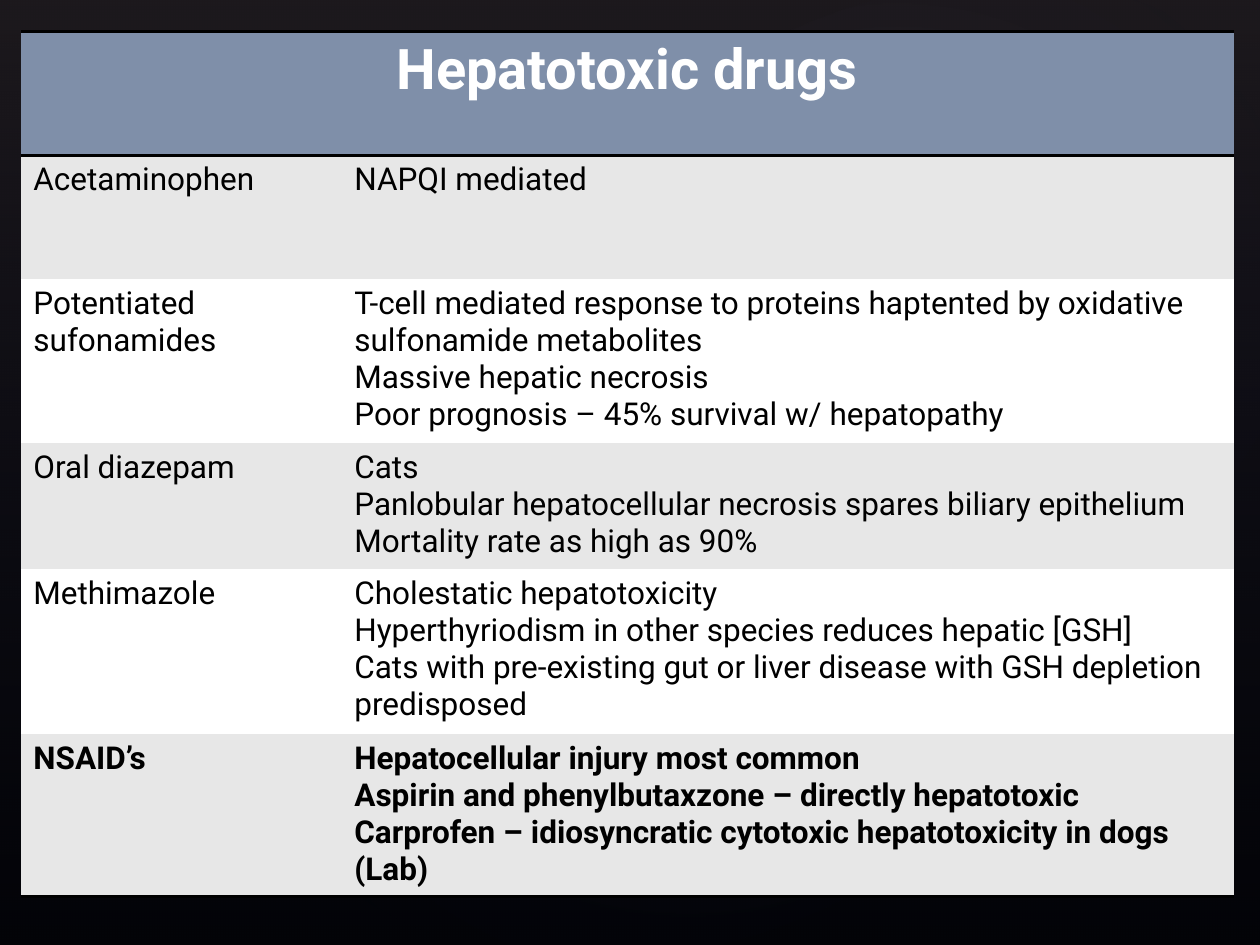
from lxml import etree
from pptx import Presentation
from pptx.dml.color import RGBColor
from pptx.enum.shapes import MSO_SHAPE
from pptx.enum.text import PP_ALIGN
from pptx.oxml.ns import qn
from pptx.util import Cm, Pt

LEFT, CENTER = PP_ALIGN.LEFT, PP_ALIGN.CENTER
RECT, OVAL = MSO_SHAPE.RECTANGLE, MSO_SHAPE.OVAL
FONT = "Roboto"
COLORS = {
    "back": "000000",
    "dusk": "504652",
    "navy": "242852",
    "glow": "C4BCC6",
    "head": "7F8FA9",
    "band": "E7E7E7",
    "plain": "FFFFFF",
    "text": "000000",
    "line": "000000",
}
WIDE, HIGH = 25.4, 19.05
# Box in cm, turn in degrees, opacity in percent
GLOWS = [
    ((3.81, 2.9, 20.12, 15.85), 328.7, 7),
    ((-0.76, 3.25, 15.39, 12.45), 294.3, 8),
    ((9.09, 0.33, 18.01, 13.21), 328.7, 8),
]
TITLE = "Hepatotoxic drugs"
# Drug, facts, row height in cm
DRUGS = [
    ("Acetaminophen", ["NAPQI mediated"], 2.5),
    ("Potentiated sufonamides", [
        "T-cell mediated response to proteins haptented by oxidative "
        "sulfonamide metabolites",
        "Massive hepatic necrosis",
        "Poor prognosis – 45% survival w/ hepatopathy"], 3.31),
    ("Oral diazepam", [
        "Cats",
        "Panlobular hepatocellular necrosis spares biliary epithelium",
        "Mortality rate as high as 90%"], 2.54),
    ("Methimazole", [
        "Cholestatic hepatotoxicity",
        "Hyperthyriodism in other species reduces hepatic [GSH]",
        "Cats with pre-existing gut or liver disease with GSH depletion "
        "predisposed"], 3.31),
    ("NSAID’s", [
        "Hepatocellular injury most common",
        "Aspirin and phenylbutaxzone – directly hepatotoxic",
        "Carprofen – idiosyncratic cytotoxic hepatotoxicity in dogs (Lab)"],
        3.29),
]
HEAD_H = 2.5
COLS = [6.47, 17.98]


def rgb(name):
    return RGBColor.from_string(COLORS[name])


def write(frame, lines, size=18, color="text", bold=False, align=LEFT):
    for i, line in enumerate(lines):
        para = frame.add_paragraph() if i else frame.paragraphs[0]
        para.alignment = align
        run = para.add_run()
        run.text = line
        font = run.font
        font.name, font.size, font.bold = FONT, Pt(size), bold
        font.color.rgb = rgb(color)


def edge(cell, ruled):
    """Rule the named sides (of L, R, T, B) and clear the others."""
    props = cell._tc.get_or_add_tcPr()
    for i, side in enumerate("LRTB"):
        line = etree.Element(qn("a:ln" + side), w=str(Pt(2)))
        if side in ruled:
            fill = etree.SubElement(line, qn("a:solidFill"))
            etree.SubElement(fill, qn("a:srgbClr"), val=COLORS["line"])
        else:
            etree.SubElement(line, qn("a:noFill"))
        props.insert(i, line)


def paint(cell, color, ruled=""):
    cell.fill.solid()
    cell.fill.fore_color.rgb = rgb(color)
    edge(cell, ruled)


def add_haze(slide, kind, box, stops, turn=0):
    """Add a see-through gradient; stops are (percent, color, opacity)."""
    shape = slide.shapes.add_shape(kind, *map(Cm, box))
    shape.shadow.inherit = False
    shape.rotation = turn
    shape.line.fill.background()
    fill = etree.Element(qn("a:gradFill"), rotWithShape="1")
    steps = etree.SubElement(fill, qn("a:gsLst"))
    for place, name, seen in stops:
        stop = etree.SubElement(steps, qn("a:gs"), pos=str(place * 1000))
        color = etree.SubElement(stop, qn("a:srgbClr"), val=COLORS[name])
        etree.SubElement(color, qn("a:alpha"), val=str(seen * 1000))
    if kind == OVAL:
        way = etree.SubElement(fill, qn("a:path"), path="circle")
        etree.SubElement(way, qn("a:fillToRect"),
                         dict.fromkeys("ltrb", "50000"))
    else:
        etree.SubElement(fill, qn("a:lin"), ang="5400000", scaled="0")
    shape._element.spPr.find(qn("a:prstGeom")).addnext(fill)


def add_back(slide):
    fill = slide.background.fill
    fill.solid()
    fill.fore_color.rgb = rgb("back")
    add_haze(slide, RECT, (0, 0, WIDE, HIGH),
             [(0, "dusk", 36), (100, "navy", 10)])
    for box, turn, seen in GLOWS:
        add_haze(slide, OVAL, box,
                 [(0, "glow", seen), (58, "navy", 0), (100, "navy", 0)], turn)


def add_drugs(slide):
    sizes = [HEAD_H] + [high for _, _, high in DRUGS]
    table = slide.shapes.add_table(
        len(sizes), len(COLS), Cm(0.42), Cm(0.63),
        Cm(sum(COLS)), Cm(sum(sizes))).table
    for col, wide in zip(table.columns, COLS):
        col.width = Cm(wide)
    for row, high in zip(table.rows, sizes):
        row.height = Cm(high)

    head = table.cell(0, 0)
    head.merge(table.cell(0, 1))
    for cell in table.rows[0].cells:
        paint(cell, "head", "TB")
    write(head.text_frame, [TITLE], size=32, color="plain", bold=True,
          align=CENTER)

    for i, (drug, facts, _) in enumerate(DRUGS, 1):
        last = i == len(DRUGS)
        ruled = ("T" if i == 1 else "") + ("B" if last else "")
        for cell, lines in zip(table.rows[i].cells, ([drug], facts)):
            paint(cell, "band" if i % 2 else "plain", ruled)
            write(cell.text_frame, lines, bold=last)


def main():
    deck = Presentation()
    deck.slide_width, deck.slide_height = Cm(WIDE), Cm(HIGH)
    slide = deck.slides.add_slide(deck.slide_layouts[6])
    add_back(slide)
    add_drugs(slide)
    deck.save("out.pptx")


if __name__ == "__main__":
    main()
